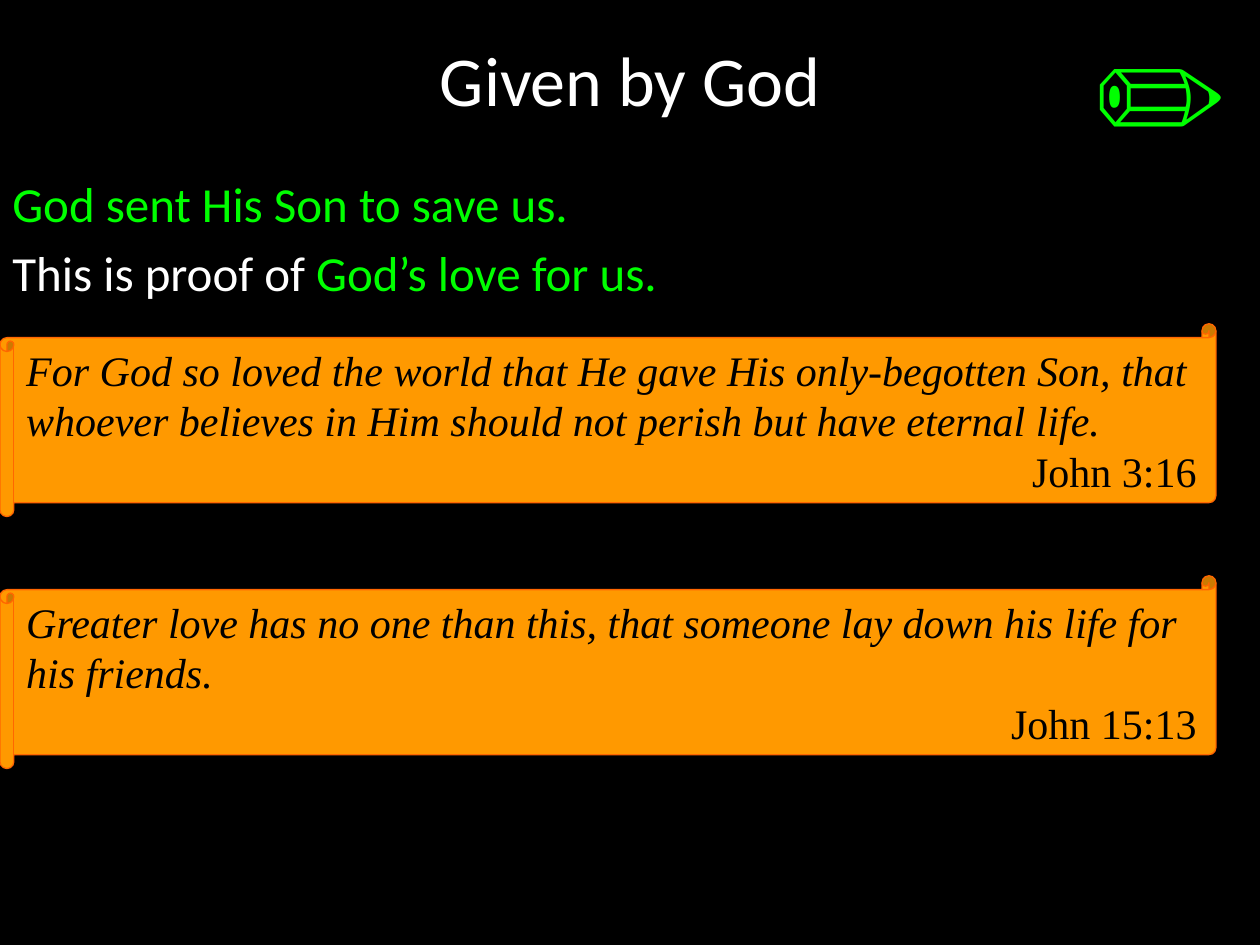
from pptx import Presentation
from pptx.dml.color import RGBColor
from pptx.enum.shapes import MSO_SHAPE
from pptx.enum.text import MSO_ANCHOR, PP_ALIGN
from pptx.util import Inches, Pt

SCROLL = MSO_SHAPE.HORIZONTAL_SCROLL
TOP, MIDDLE = MSO_ANCHOR.TOP, MSO_ANCHOR.MIDDLE
LEFT, CENTER, RIGHT = PP_ALIGN.LEFT, PP_ALIGN.CENTER, PP_ALIGN.RIGHT

BLACK, WHITE, GREEN = "000000", "FFFFFF", "00FF00"
ORANGE, DARK_ORANGE = "FF9900", "FF6600"
SANS, SERIF = "Calibri", "Times New Roman"

VERSES = [
    ("For God so loved the world that He gave His only-begotten Son, "
     "that whoever believes in Him should not perish but have eternal life.",
     "John 3:16"),
    ("Greater love has no one than this, that someone lay down his life "
     "for his friends.",
     "John 15:13"),
]
FIRST_VERSE_TOP, VERSE_STEP = 2.57, 2


def color(hex_value):
    return RGBColor.from_string(hex_value)


def write_text(shape, paragraphs, anchor, font_name, size):
    """Each paragraph is (format values, [(text, color, italic), ...])."""
    frame = shape.text_frame
    frame.word_wrap = True
    frame.vertical_anchor = anchor
    for index, (format_values, runs) in enumerate(paragraphs):
        paragraph = frame.add_paragraph() if index else frame.paragraphs[0]
        for name, value in format_values.items():
            setattr(paragraph, name, value)
        for text, text_color, italic in runs:
            run = paragraph.add_run()
            run.text = text
            font_values = {"name": font_name, "size": Pt(size), "italic": italic}
            for name, value in font_values.items():
                setattr(run.font, name, value)
            run.font.color.rgb = color(text_color)


def add_text(slide, box, paragraphs, anchor, font_name, size):
    shape = slide.shapes.add_textbox(*map(Inches, box))
    write_text(shape, paragraphs, anchor, font_name, size)


def add_verse_scroll(slide, top, verse, reference):
    shape = slide.shapes.add_shape(SCROLL, *map(Inches, (0, top, 9.65, 1.53)))
    shape.adjustments[0] = 0.072
    shape.shadow.inherit = False
    shape.fill.solid()
    shape.fill.fore_color.rgb = color(ORANGE)
    shape.line.color.rgb = color(DARK_ORANGE)
    shape.line.width = Pt(0.75)
    paragraphs = [
        ({"alignment": LEFT}, [(verse, BLACK, True)]),
        ({"alignment": RIGHT}, [(reference, BLACK, False)]),
    ]
    write_text(shape, paragraphs, MIDDLE, SERIF, 24)


def main():
    presentation = Presentation()
    presentation.slide_width = Inches(10)
    presentation.slide_height = Inches(7.5)
    slide = presentation.slides.add_slide(presentation.slide_layouts[6])
    slide.background.fill.solid()
    slide.background.fill.fore_color.rgb = color(BLACK)

    # Title
    centered = {"alignment": CENTER}
    add_text(slide, (0, 0, 10, 1.25),
             [(centered, [("Given by God", WHITE, False)])], MIDDLE, SANS, 40)

    # Main statements
    statement = {"alignment": LEFT, "space_before": Pt(5.6)}
    add_text(slide, (0, 1.33, 10, 6.17), [
        (statement, [("God sent His Son to save us.", GREEN, False)]),
        (statement, [("This is proof of ", WHITE, False),
                     ("God’s love for us.", GREEN, False)]),
    ], TOP, SANS, 28)

    # Bible verses
    for index, (verse, reference) in enumerate(VERSES):
        add_verse_scroll(slide, FIRST_VERSE_TOP + index * VERSE_STEP,
                         verse, reference)

    # Pencil symbol
    add_text(slide, (8.42, 0, 1.58, 1.43),
             [(centered, [("✏", GREEN, False)])], MIDDLE, SERIF, 80)

    presentation.save("out.pptx")


if __name__ == "__main__":
    main()
